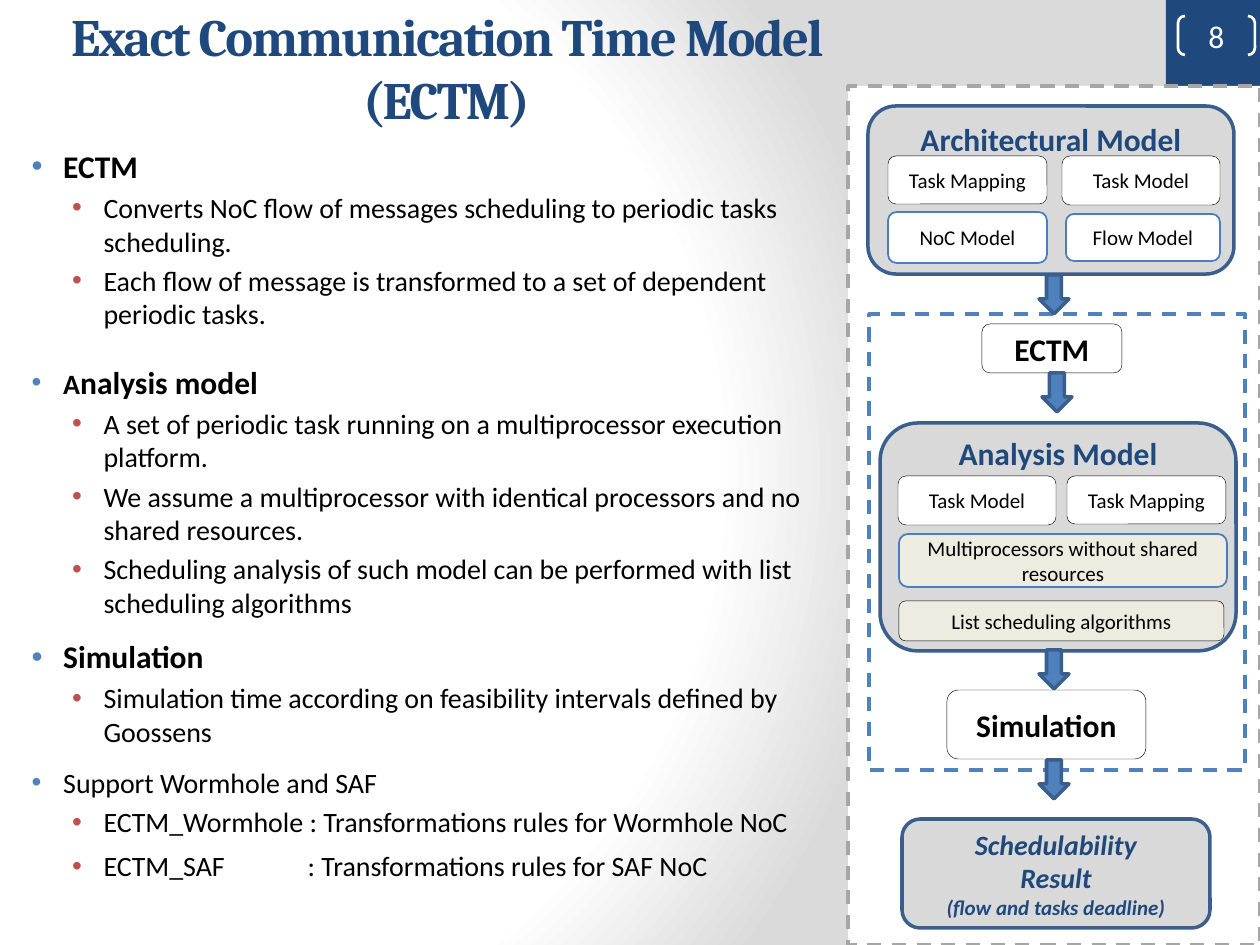
import pptx
import pptx.util
import pptx.dml.color
import pptx.enum.dml
import pptx.enum.shapes
import pptx.enum.text
import pptx.oxml
import pptx.oxml.ns

SHAPE = pptx.enum.shapes.MSO_SHAPE
ALIGN = pptx.enum.text.PP_ALIGN
ANCHOR = pptx.enum.text.MSO_ANCHOR
Pt = pptx.util.Pt
qn = pptx.oxml.ns.qn
SCALE = 914400 / 126

HUE = {
    "navy": "1F497D", "blue": "4F81BD", "edge": "3A5F8C", "thin": "4B7EBC",
    "red": "C0504D", "white": "FFFFFF", "black": "000000", "fog": "DADADA",
    "grey": "D9D9D9", "dash": "A6A6A6", "sand": "EEECE1",
}

TITLE = "Exact Communication Time Model (ECTM)"

# level, space before in points, runs of (text, size, bold)
BODY = [
    (0, 3.6, [("ECTM", 18, True)]),
    (1, 3.2, [("Converts NoC flow of messages scheduling to periodic tasks scheduling.", 16, False)]),
    (1, 3.2, [("Each flow of message is transformed to a set of dependent periodic tasks.", 16, False)]),
    (0, 18.5, [("A", 16, True), ("nalysis model", 18, True)]),
    (1, 3.2, [("A set of periodic task running on a multiprocessor execution platform.", 16, False)]),
    (1, 3.2, [("We assume a multiprocessor with identical processors and no shared resources.", 16, False)]),
    (1, 3.2, [("Scheduling analysis of such model can be performed with list scheduling algorithms", 16, False)]),
    (0, 10.5, [("Simulation", 18, True)]),
    (1, 3.2, [("Simulation time according on feasibility intervals defined by Goossens", 16, False)]),
    (0, 10, [("Support Wormhole and SAF", 16, False)]),
    (1, 3.2, [("ECTM_Wormhole : Transformations rules for Wormhole NoC", 16, False)]),
    (1, 6, [("ECTM_SAF\t: Transformations rules for SAF NoC", 16, False)]),
]
LEVELS = [("blue", 0.38), ("red", 0.7)]  # bullet colour, indent in inches
TAB = 2.32

# left, top, width, height, line colour
FRAMES = [(848, 86, 412, 859, "dash"), (869, 314, 376, 456, "blue")]

# left, top, width, height, heading, top inset
GROUPS = [
    (868, 106, 366, 168, "Architectural Model", 6),
    (880, 423, 356, 228, "Analysis Model", 0),
]

# left, top, width, height, text, fill, line, line width
PARTS = [
    (1062, 156, 158, 49, "Task Model", "white", "black", 0.25),
    (888, 156, 159, 48, "Task Mapping", "white", "black", 0.25),
    (888, 212, 159, 51, "NoC Model", "white", "thin", 1),
    (1066, 214, 154, 47, "Flow Model", "white", "thin", 1),
    (898, 476, 158, 49, "Task Model", "white", "black", 0.25),
    (1067, 476, 159, 48, "Task Mapping", "white", "black", 0.25),
    (899, 601, 325, 40, "List scheduling algorithms", "sand", "black", 0.25),
    (899, 534, 328, 53, "Multiprocessors without shared resources", "sand", "thin", 1),
]
STEPS = [(982, 324, 140, 49, "ECTM"), (947, 690, 199, 69, "Simulation")]
RESULT = [("Schedulability", 16), ("Result", 16), ("(flow and tasks deadline)", 12)]
ARROWS = [(1039, 275), (1042, 373), (1039, 650), (1039, 760)]


def px(n):
    return pptx.util.Emu(round(n * SCALE))


def rgb(name):
    return pptx.dml.color.RGBColor.from_string(HUE[name])


def xml(text):
    """Parse a fragment whose root element is in the a: namespace."""
    tag, rest = text.split(" ", 1)
    return pptx.oxml.parse_xml(f"{tag} {pptx.oxml.ns.nsdecls('a')} {rest}")


def write(para, text, size, hue="black", bold=False, slant=False, face="Calibri"):
    run = para.add_run()
    run.text = text
    font = run.font
    font.name, font.size, font.bold, font.italic = face, Pt(size), bold, slant
    font.color.rgb = rgb(hue)
    return run


def draw(slide, kind, box, fill=None, line=None, width=1, dash=False):
    shape = slide.shapes.add_shape(kind, *map(px, box))
    shape.shadow.inherit = False
    if fill:
        shape.fill.solid()
        shape.fill.fore_color.rgb = rgb(fill)
    else:
        shape.fill.background()
    if line:
        shape.line.color.rgb = rgb(line)
        shape.line.width = Pt(width)
        if dash:
            shape.line.dash_style = pptx.enum.dml.MSO_LINE.DASH
    else:
        shape.line.fill.background()
    return shape


def label(shape, lines, hue="black", bold=False, slant=False):
    """Centre (text, size) lines in a shape, one paragraph each."""
    frame = shape.text_frame
    frame.word_wrap = True
    frame.vertical_anchor = ANCHOR.MIDDLE
    for i, (text, size) in enumerate(lines):
        para = frame.add_paragraph() if i else frame.paragraphs[0]
        para.alignment = ALIGN.CENTER
        write(para, text, size, hue, bold, slant)
    return frame


def paint(slide):
    """Fill the background with a circular gradient."""
    slide.background.fill.gradient()
    grad = slide.background._cSld.find(".//" + qn("a:gradFill"))
    for child in list(grad):
        grad.remove(child)
    stops = "".join(
        f'<a:gs pos="{pos * 1000}"><a:srgbClr val="{HUE[hue]}"/></a:gs>'
        for pos, hue in [(0, "white"), (75, "white"), (100, "fog")])
    grad.append(xml(f"<a:gsLst >{stops}</a:gsLst>"))
    grad.append(xml('<a:path path="circle"><a:fillToRect l="20000" t="50000"'
                    ' r="100000" b="50000"/></a:path>'))


def head(slide):
    title = slide.shapes.title
    title.left, title.top, title.width, title.height = map(px, (54, 8, 785, 118))
    frame = title.text_frame
    frame.word_wrap = True
    frame.auto_size = pptx.enum.text.MSO_AUTO_SIZE.NONE
    frame.vertical_anchor = ANCHOR.MIDDLE
    para = frame.paragraphs[0]
    para.alignment = ALIGN.CENTER
    run = write(para, TITLE, 30, "navy", True, face="Cambria")
    run.font._element.set("spc", "-100")


def notes(slide):
    """Lay out the bulleted text on the left."""
    frame = slide.shapes.add_textbox(*map(px, (3, 141, 825, 748))).text_frame
    frame.word_wrap = True
    for i, (level, gap, runs) in enumerate(BODY):
        para = frame.add_paragraph() if i else frame.paragraphs[0]
        para.level = level
        para.space_before = Pt(gap)
        hue, indent = LEVELS[level]
        props = para._p.get_or_add_pPr()
        props.set("marL", str(pptx.util.Inches(indent)))
        props.set("indent", str(pptx.util.Inches(-0.25)))
        props.append(xml(f'<a:buClr ><a:srgbClr val="{HUE[hue]}"/></a:buClr>'))
        props.append(xml('<a:buFont typeface="Arial"/>'))
        props.append(xml('<a:buChar char="•"/>'))
        if "\t" in runs[0][0]:
            props.append(xml(f'<a:tabLst ><a:tab pos="{pptx.util.Inches(TAB)}" algn="l"/></a:tabLst>'))
        for text, size, bold in runs:
            write(para, text, size, bold=bold)


def flow(slide):
    """Draw the chain of models on the right."""
    for *box, line in FRAMES:
        draw(slide, SHAPE.RECTANGLE, box, "white", line, 2, True)
    for *box, text, inset in GROUPS:
        group = draw(slide, SHAPE.ROUNDED_RECTANGLE, box, "grey", "edge", 2)
        frame = label(group, [(text, 18)], "navy", True)
        frame.vertical_anchor = ANCHOR.TOP
        frame.margin_top = px(inset)
    for *box, text, fill, line, width in PARTS:
        label(draw(slide, SHAPE.ROUNDED_RECTANGLE, box, fill, line, width), [(text, 12)])
    for *box, text in STEPS:
        step = draw(slide, SHAPE.ROUNDED_RECTANGLE, box, "white", "black", 0.25)
        label(step, [(text, 18)], bold=True)
    end = draw(slide, SHAPE.ROUNDED_RECTANGLE, (902, 819, 308, 109), "grey", "edge", 2)
    label(end, RESULT, "navy", True, True)
    for left, top in ARROWS:
        draw(slide, SHAPE.DOWN_ARROW, (left, top, 30, 39), "blue", "edge", 2)


def main():
    deck = pptx.Presentation()
    deck.slide_width, deck.slide_height = px(1260), px(945)
    slide = deck.slides.add_slide(deck.slide_layouts[5])
    paint(slide)
    head(slide)
    draw(slide, SHAPE.RECTANGLE, (1166, 0, 94, 945), "navy")
    notes(slide)
    flow(slide)
    page = draw(slide, SHAPE.DOUBLE_BRACKET, (1178, 16, 77, 39), None, "white", 1.5)
    page.adjustments[0] = 0.18
    frame = label(page, [("8", 18)], "white")
    frame.margin_left = frame.margin_right = frame.margin_top = frame.margin_bottom = 0
    deck.save("out.pptx")


if __name__ == "__main__":
    main()
